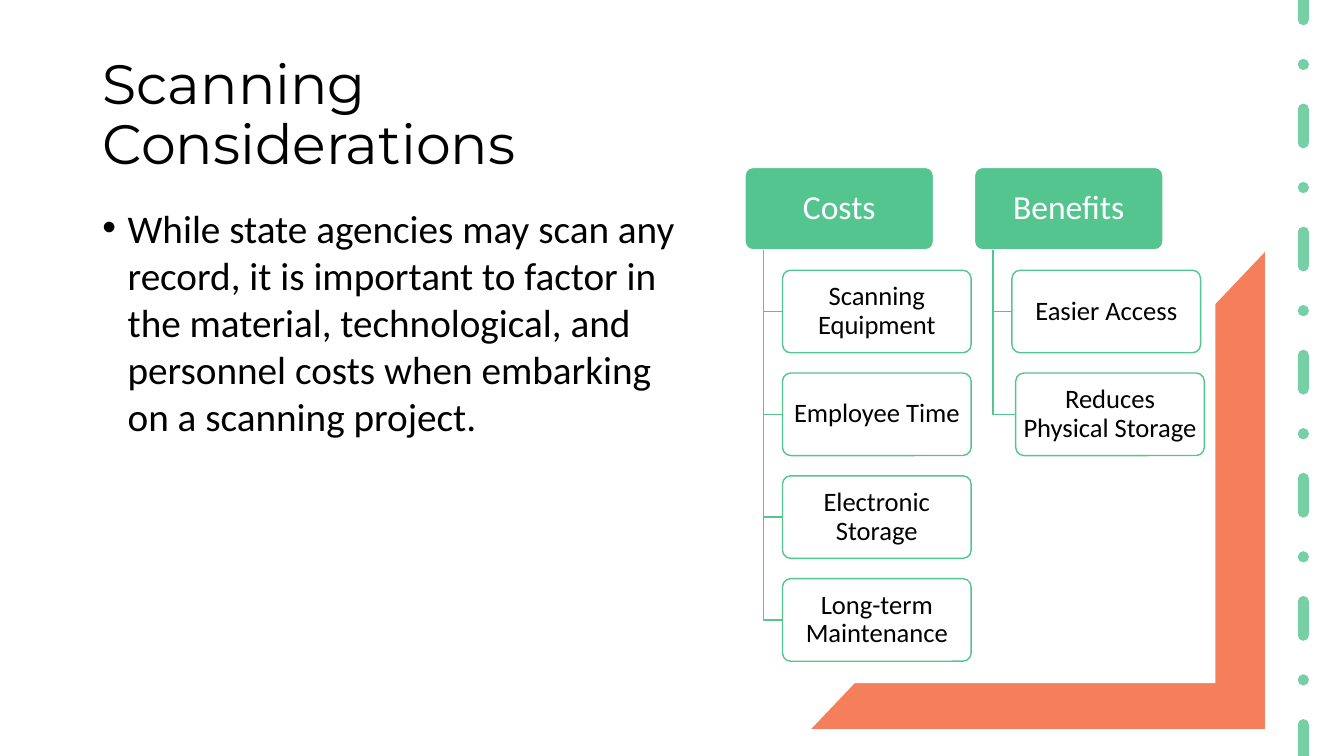
from dataclasses import dataclass
from typing import Any

from lxml import etree
from pptx import Presentation
from pptx.dml.color import RGBColor
from pptx.enum import dml, shapes, text
from pptx.oxml.ns import qn
from pptx.util import Pt

HUES = {"green": "55C58F", "orange": "F26031", "white": "FFFFFF", "black": "000000"}
KINDS = shapes.MSO_SHAPE

HEAD_TOP, LEAF_TOP, STEP = 119.5, 193, 73.44
BOX_W, BOX_H = 134.8, 59
STEM_IN, LEAF_IN = 13.4, 26.8


@dataclass
class Leaf:
    label: str
    shift: float = 0


@dataclass
class Branch:
    label: str
    left: float
    leaves: list[Leaf]


@dataclass
class Style:
    fill: str
    line: str
    ink: str
    size: float
    alpha: int = 100


HEAD = Style("green", "white", "white", 24)
LEAF = Style("white", "green", "black", 19, 90)

BRANCHES = [
    Branch("Costs", 532.1, [Leaf("Scanning Equipment"), Leaf("Employee Time"),
                            Leaf("Electronic Storage"), Leaf("Long-term Maintenance")]),
    Branch("Benefits", 696, [Leaf("Easier Access"), Leaf("Reduces Physical Storage", 2.7)]),
]


def tint(name: str) -> RGBColor:
    return RGBColor.from_string(HUES[name])


def apply(target: Any, values: dict[str, Any]) -> None:
    for key, value in values.items():
        setattr(target, key, value)


def fade(shape: Any, alpha: int) -> None:
    """Set the opacity, in percent, of the first colour of a shape."""
    hue = next(shape._element.spPr.iter(qn("a:srgbClr")))
    etree.SubElement(hue, qn("a:alpha")).set("val", str(alpha * 1000))


def stroke(shape: Any, hue: str, width: float = 1) -> None:
    shape.line.color.rgb = tint(hue)
    shape.line.width = Pt(width)


def write(frame: Any, words: str, font: dict[str, Any], para: dict[str, Any],
          body: dict[str, Any]) -> Any:
    apply(frame, {"word_wrap": True, "auto_size": text.MSO_AUTO_SIZE.NONE} | body)
    line = frame.paragraphs[0]
    apply(line, para)
    run = line.add_run()
    run.text = words
    apply(run.font, font)
    run.font.color.rgb = run.font.color.rgb if run.font.color.type else tint("black")
    return line


def add_block(slide: Any, kind: Any, box: tuple[float, ...], adj: float, hue: str) -> Any:
    shape = slide.shapes.add_shape(kind, *map(Pt, box))
    shape.adjustments[0] = adj
    shape.shadow.inherit = False
    shape.fill.solid()
    shape.fill.fore_color.rgb = tint(hue)
    shape.line.fill.background()
    return shape


def add_box(slide: Any, label: str, left: float, top: float, style: Style) -> None:
    shape = add_block(slide, KINDS.ROUNDED_RECTANGLE, (left, top, BOX_W, BOX_H), 0.1, style.fill)
    if style.alpha < 100:
        fade(shape, style.alpha)
    stroke(shape, style.line)
    line = write(shape.text_frame, label, {"name": "Calibri", "size": Pt(style.size)},
                 {"alignment": text.PP_ALIGN.CENTER, "line_spacing": 0.9},
                 {"vertical_anchor": text.MSO_ANCHOR.MIDDLE,
                  "margin_left": Pt(2.8), "margin_right": Pt(2.8),
                  "margin_top": Pt(2), "margin_bottom": Pt(2)})
    line.runs[0].font.color.rgb = tint(style.ink)


def add_stem(slide: Any, left: float, top: float, right: float, low: float) -> None:
    """Draw the bent line from a head down and across to a leaf."""
    path = slide.shapes.build_freeform(Pt(left), Pt(top))
    path.add_line_segments([(Pt(left), Pt(low)), (Pt(right), Pt(low))], close=False)
    stem = path.convert_to_shape()
    stem.shadow.inherit = False
    stem.fill.background()
    stroke(stem, "green")


def add_branch(slide: Any, branch: Branch) -> None:
    add_box(slide, branch.label, branch.left, HEAD_TOP, HEAD)
    for row, leaf in enumerate(branch.leaves):
        left = branch.left + LEAF_IN + leaf.shift
        top = LEAF_TOP + row * STEP
        add_stem(slide, branch.left + STEM_IN, HEAD_TOP + BOX_H, left, top + BOX_H / 2)
        add_box(slide, leaf.label, left, top, LEAF)


def add_decor(slide: Any) -> None:
    corner = add_block(slide, KINDS.ISOSCELES_TRIANGLE, (579.6, 180, 324, 340.6), 1, "orange")
    fade(corner, 80)
    mask = add_block(slide, KINDS.SNIP_1_RECTANGLE, (525.6, 26, 342, 461.5), 0.28, "white")
    stroke(mask, "white")

    edge = slide.shapes.add_connector(shapes.MSO_CONNECTOR.STRAIGHT,
                                      *map(Pt, (931, -10, 931, 550)))
    stroke(edge, "green", 8)
    edge.line.dash_style = dml.MSO_LINE.DASH_DOT
    fade(edge, 80)
    props = edge._element.spPr
    props.find(qn("a:ln")).set("cap", "rnd")
    etree.SubElement(props, qn("a:effectLst"))


def place(shape: Any, *box: float) -> None:
    apply(shape, dict(zip(("left", "top", "width", "height"), map(Pt, box))))


def add_copy(slide: Any) -> None:
    """Fill the title and the bullet list."""
    title, body = slide.placeholders
    place(title, 66, 33, 423.5, 96.5)
    write(title.text_frame, "Scanning Considerations",
          {"name": "Montserrat", "size": Pt(39.6)},
          {"alignment": text.PP_ALIGN.LEFT, "line_spacing": 0.9},
          {"vertical_anchor": text.MSO_ANCHOR.BOTTOM})

    place(body, 66, 142, 423.5, 331)
    line = write(body.text_frame,
                 "While state agencies may scan any record, it is important to factor in "
                 "the material, technological, and personnel costs when embarking on a "
                 "scanning project.",
                 {"name": "Calibri", "size": Pt(28)}, {"space_before": Pt(10)},
                 {"vertical_anchor": text.MSO_ANCHOR.TOP})
    props = line._p.get_or_add_pPr()
    props.set("marL", str(Pt(18)))
    props.set("indent", str(-Pt(18)))
    etree.SubElement(props, qn("a:buFont")).set("typeface", "Arial")
    etree.SubElement(props, qn("a:buChar")).set("char", "•")


def main() -> None:
    deck = Presentation()
    apply(deck, {"slide_width": Pt(960), "slide_height": Pt(540)})
    slide = deck.slides.add_slide(deck.slide_layouts[1])
    add_decor(slide)
    add_copy(slide)
    for branch in BRANCHES:
        add_branch(slide, branch)
    deck.save("out.pptx")


if __name__ == "__main__":
    main()
